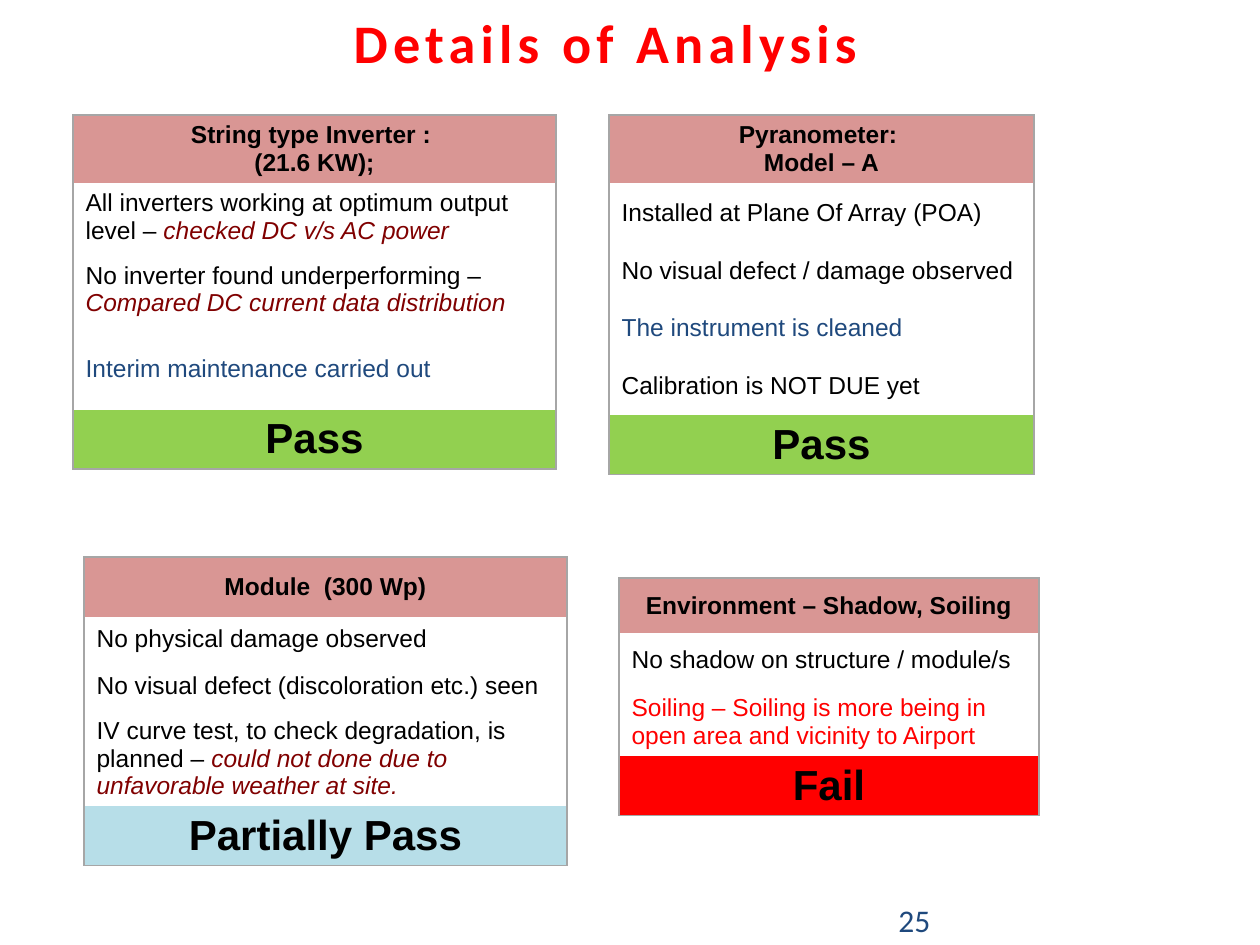
from dataclasses import dataclass
from lxml.etree import SubElement
from pptx import Presentation
from pptx.dml.color import RGBColor as RGB
from pptx.enum.text import MSO_ANCHOR as Anchor, PP_ALIGN as Align
from pptx.oxml.ns import qn
from pptx.util import Pt

PX = 914400 // 126


@dataclass(frozen=True)
class Theme:
    ink: str = "000000"
    red: str = "FF0000"
    maroon: str = "800000"
    navy: str = "1F497D"
    rose: str = "D99694"
    green: str = "92D050"
    sky: str = "B7DEE8"
    line: str = "A6A6A6"
    head: str = "Calibri"
    body: str = "Arial"
    title: int = 31
    text: int = 14
    grade: int = 24
    page: int = 18


T = Theme()
PLAIN, NOTE = (T.ink, False), (T.maroon, True)
DONE, ALERT = (T.navy, False), (T.red, False)

# Content: each card has a place, heading lines, findings made of runs, a grade
TITLE, PAGE = "Details of Analysis", "25"
CARDS = [
    dict(at=(73, 115), width=483, rows=(68, 67, 78, 81, 59),
         head=["String type Inverter : ", "(21.6 KW);"],
         items=[
             [("All inverters working at optimum output level – ", PLAIN),
              ("checked DC v/s AC power", NOTE)],
             [("No inverter found underperforming – ", PLAIN),
              ("Compared DC current data distribution", NOTE)],
             [("Interim maintenance carried out", DONE)]],
         grade=("Pass", T.green)),
    dict(at=(84, 557), width=483, rows=(60, 44, 50, 95, 59),
         head=["Module  (300 Wp)"],
         items=[
             [("No physical damage observed", PLAIN)],
             [("No visual defect (discoloration etc.) seen", PLAIN)],
             [("IV curve test, to check degradation, is planned – ", PLAIN),
              ("could not done due to unfavorable weather at site.", NOTE)]],
         grade=("Partially Pass", T.sky)),
    dict(at=(609, 115), width=425, rows=(68, 60, 57, 57, 58, 59),
         head=["Pyranometer: ", "Model – A"],
         items=[
             [("Installed at Plane Of Array (POA)", PLAIN)],
             [("No visual defect / damage observed", PLAIN)],
             [("The instrument is cleaned", DONE)],
             [("Calibration is NOT DUE yet", PLAIN)]],
         grade=("Pass", T.green)),
    dict(at=(619, 578), width=420, rows=(55, 55, 68, 59),
         head=["Environment – Shadow, Soiling"],
         items=[
             [("No shadow on structure / module/s", PLAIN)],
             [("Soiling – Soiling is more being in open area and "
               "vicinity to Airport", ALERT)]],
         grade=("Fail", T.red)),
]


def add_run(para, text, size, color=T.ink, face=T.body, bold=False, slant=False):
    run = para.add_run()
    run.text = text
    font = run.font
    font.name, font.size = face, Pt(size)
    font.bold, font.italic = bold, slant
    font.color.rgb = RGB.from_string(color)
    return run


def set_edges(cell, first, last):
    """Outline the card and hide the lines between its rows."""
    props = cell._tc.get_or_add_tcPr()
    for side, shown in zip("LRTB", (True, True, first, last)):
        line = SubElement(props, qn(f"a:ln{side}"), w=str(Pt(1)))
        if shown:
            fill = SubElement(line, qn("a:solidFill"))
            SubElement(fill, qn("a:srgbClr"), val=T.line)
        else:
            SubElement(line, qn("a:noFill"))


def fill_cell(cell, lines, size, align, bold=False, fill=None):
    frame = cell.text_frame
    for i, runs in enumerate(lines):
        para = frame.add_paragraph() if i else frame.paragraphs[0]
        para.alignment = align
        for text, (color, slant) in runs:
            add_run(para, text, size, color, bold=bold, slant=slant)
    cell.vertical_anchor = Anchor.MIDDLE
    if fill:
        cell.fill.solid()
        cell.fill.fore_color.rgb = RGB.from_string(fill)
    else:
        cell.fill.background()


def add_card(slide, card):
    rows = card["rows"]
    box = [n * PX for n in (*card["at"], card["width"], sum(rows))]
    table = slide.shapes.add_table(len(rows), 1, *box).table
    table.horz_banding = False
    last = len(rows) - 1
    for i, tall in enumerate(rows):
        table.rows[i].height = tall * PX
        set_edges(table.cell(i, 0), i == 0, i == last)
    head = [[(text, PLAIN)] for text in card["head"]]
    fill_cell(table.cell(0, 0), head, T.text, Align.CENTER, True, T.rose)
    for i, runs in enumerate(card["items"], 1):
        fill_cell(table.cell(i, 0), [runs], T.text, Align.LEFT)
    grade, color = card["grade"]
    fill_cell(table.cell(last, 0), [[(grade, PLAIN)]], T.grade,
              Align.CENTER, True, color)


def main():
    deck = Presentation()
    deck.slide_width, deck.slide_height = 1260 * PX, 945 * PX
    slide = deck.slides.add_slide(deck.slide_layouts[5])

    # Title
    title = slide.shapes.title
    title.left, title.top, title.width, title.height = (
        n * PX for n in (73, 0, 1065, 83))
    title.text_frame.vertical_anchor = Anchor.MIDDLE
    para = title.text_frame.paragraphs[0]
    para.alignment = Align.CENTER
    run = add_run(para, TITLE, T.title, T.red, T.head, bold=True)
    run._r.get_or_add_rPr().set("spc", "300")

    # Result cards
    for card in CARDS:
        add_card(slide, card)

    # Page number
    page = slide.shapes.add_textbox(*(n * PX for n in (886, 895, 144, 49)))
    page.text_frame.word_wrap = True
    add_run(page.text_frame.paragraphs[0], PAGE, T.page, T.navy, T.head)

    deck.save("out.pptx")


if __name__ == "__main__":
    main()
